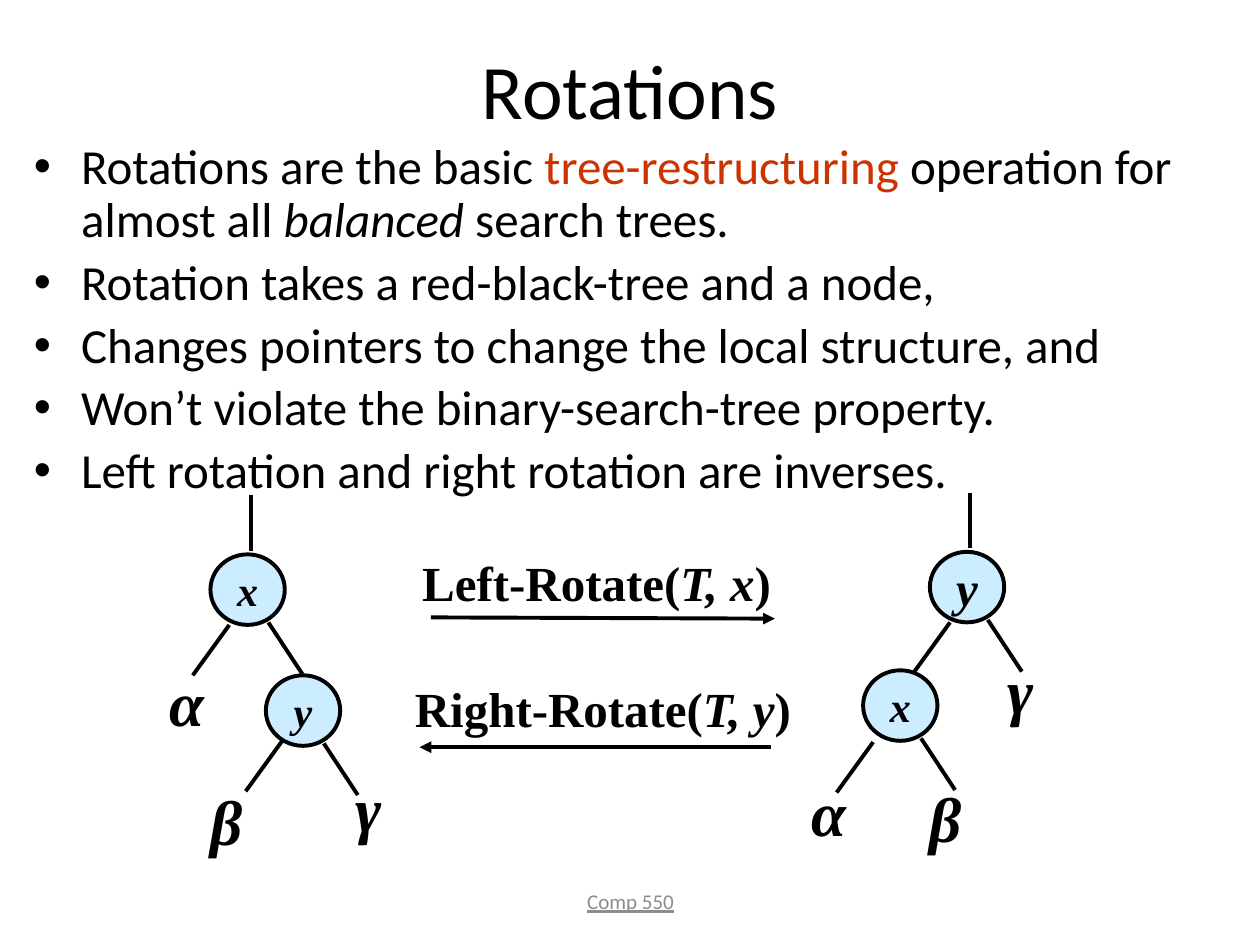
from dataclasses import dataclass

import pptx
import pptx.dml.color
import pptx.enum.shapes
import pptx.enum.text
import pptx.oxml.ns
import pptx.util
from lxml import etree

MSO = pptx.enum.shapes
TXT = pptx.enum.text
COLS, ROWS = 100, 75


@dataclass(frozen=True)
class Theme:
    sans: str = "Calibri"
    serif: str = "Times New Roman"
    ink: str = "000000"
    accent: str = "CC3300"
    node: str = "CCECFF"
    muted: str = "8C8C8C"
    title: int = 44
    body: int = 28
    leaf: int = 36
    small_node: int = 24
    footer: int = 12
    line: float = 2.25


@dataclass(frozen=True)
class Box:
    col: float
    row: float
    cols: float
    rows: float


@dataclass(frozen=True)
class Node:
    """A tree node; left_leg is where its left edge starts, from its corner."""
    key: str
    col: float
    row: float
    left_leg: tuple[float, float]
    size: int = 24
    root: bool = False


@dataclass(frozen=True)
class Leaf:
    text: str
    col: float
    row: float
    cols: float


T = Theme()
prs = pptx.Presentation()
prs.slide_width, prs.slide_height = pptx.util.Inches(10), pptx.util.Inches(7.5)
slide = prs.slides.add_slide(prs.slide_layouts[5])


def x(col: float) -> int:
    return round(prs.slide_width * col / COLS)


def y(row: float) -> int:
    return round(prs.slide_height * row / ROWS)


def area(box: Box) -> tuple[int, int, int, int]:
    return x(box.col), y(box.row), x(box.cols), y(box.rows)


def rgb(value: str) -> pptx.dml.color.RGBColor:
    return pptx.dml.color.RGBColor.from_string(value)


def add_run(p, text: str, color: str = T.ink, size: float = T.body, **style) -> None:
    r = p.add_run()
    r.text = text
    for name, value in {"size": pptx.util.Pt(size), "name": T.sans, **style}.items():
        setattr(r.font, name, value)
    r.font.color.rgb = rgb(color)


def center(tf, wrap: bool = False):
    for name, value in {"word_wrap": wrap,
                        "vertical_anchor": TXT.MSO_ANCHOR.MIDDLE}.items():
        setattr(tf, name, value)
    p = tf.paragraphs[0]
    p.alignment = TXT.PP_ALIGN.CENTER
    return p


def add_label(box: Box, runs: list[tuple[str, bool]], size: int) -> None:
    tf = slide.shapes.add_textbox(*area(box)).text_frame
    tf.auto_size = TXT.MSO_AUTO_SIZE.SHAPE_TO_FIT_TEXT
    p = center(tf)
    for text, italic in runs:
        add_run(p, text, size=size, name=T.serif, bold=True, italic=italic)


def add_line(start: tuple[float, float], end: tuple[float, float],
             arrow: bool = False) -> None:
    sp = slide.shapes.add_connector(MSO.MSO_CONNECTOR.STRAIGHT, x(start[0]),
                                    y(start[1]), x(end[0]), y(end[1]))
    sp.line.color.rgb = rgb(T.ink)
    sp.line.width = pptx.util.Pt(T.line)
    qn = pptx.oxml.ns.qn
    if arrow:
        etree.SubElement(sp.line._get_or_add_ln(), qn("a:tailEnd"), type="triangle")
    etree.SubElement(sp._element.spPr, qn("a:effectLst"))


def add_node(node: Node) -> None:
    c, r = node.col, node.row
    sp = slide.shapes.add_shape(MSO.MSO_SHAPE.OVAL, *area(Box(c, r, 5.9, 5.6)))
    sp.shadow.inherit = False
    sp.fill.solid()
    sp.fill.fore_color.rgb = rgb(T.node)
    sp.line.color.rgb = rgb(T.ink)
    sp.line.width = pptx.util.Pt(T.line)
    add_run(center(sp.text_frame), node.key, size=node.size, name=T.serif,
            bold=True, italic=True)
    # Edges to both children, and the stem above a root
    left, top = c + node.left_leg[0], r + node.left_leg[1]
    add_line((left, top), (left - 2.9, top + 4))
    add_line((c + 4.6, r + 5.4), (c + 7.3, r + 9.5))
    if node.root:
        add_line((c + 3.2, r - 4.7), (c + 3.2, r - 0.3))


# Title
title = slide.shapes.title
title.left, title.top, title.width, title.height = area(Box(5, 0.8, 90, 12.5))
add_run(center(title.text_frame, wrap=True), "Rotations", size=T.title)

# Bullets: each is a list of (text, style) runs
BULLETS = [
    [("Rotations are the basic ", {}), ("tree-restructuring", {"color": T.accent}),
     (" operation for almost all ", {}), ("balanced", {"italic": True}),
     (" search trees.", {})],
    [("Rotation takes a red-black-tree and a node,", {})],
    [("Changes pointers to change the local structure, and", {})],
    [("Won’t violate the binary-search-tree property.", {})],
    [("Left rotation and right rotation are inverses.", {})],
]
tf = slide.shapes.add_textbox(*area(Box(1.7, 10.8, 95.8, 30.8))).text_frame
tf.word_wrap = True
for i, runs in enumerate(BULLETS):
    p = tf.add_paragraph() if i else tf.paragraphs[0]
    p.line_spacing = 0.9
    p.space_before = pptx.util.Pt(T.body * 0.2)
    pPr = p._p.get_or_add_pPr()
    pPr.set("marL", str(x(3.75)))
    pPr.set("indent", str(-x(3.75)))
    etree.SubElement(pPr, pptx.oxml.ns.qn("a:buFont"), typeface="Arial")
    etree.SubElement(pPr, pptx.oxml.ns.qn("a:buChar"), char="•")
    for text, style in runs:
        add_run(p, text, **style)

# Footer
footer = slide.shapes.add_textbox(*area(Box(34.2, 69.5, 31.7, 4)))
add_run(center(footer.text_frame, wrap=True), "Comp 550", T.muted, T.footer,
        underline=True)

# Trees before and after the left rotation
NODES = [
    Node("x", 16.7, 44, (1.5, 5.6), root=True),
    Node("y", 21.1, 53.6, (1.3, 5.2)),
    Node("y", 73.8, 43.8, (1.6, 5.6), size=T.body, root=True),
    Node("x", 68.5, 53.2, (0.8, 5.7), size=T.small_node),
]
LEAVES = [
    Leaf("α", 12.2, 52.2, 5.2), Leaf("β ", 15.6, 61.6, 6), Leaf("γ ", 27.2, 60.6, 5.3),
    Leaf("α", 63.2, 60.9, 5.2), Leaf("β ", 72.7, 61.4, 6), Leaf("γ ", 79, 51.2, 5.3),
]
for node in NODES:
    add_node(node)
for leaf in LEAVES:
    add_label(Box(leaf.col, leaf.row, leaf.cols, 7), [(leaf.text, True)], T.leaf)

# Rotation names and arrows
ROTATIONS = [
    ("Left-Rotate(", "T, x", Box(32.3, 43.3, 30.1, 5.7), (34.2, 49), (61.5, 49.1)),
    ("Right-Rotate(", "T, y", Box(31.7, 53.3, 32.3, 5.7), (61.2, 59.3), (33.3, 59.3)),
]
for name, args, box, start, end in ROTATIONS:
    add_label(box, [(name, False), (args, True), (")", False)], T.body)
    add_line(start, end, arrow=True)

prs.save("out.pptx")
